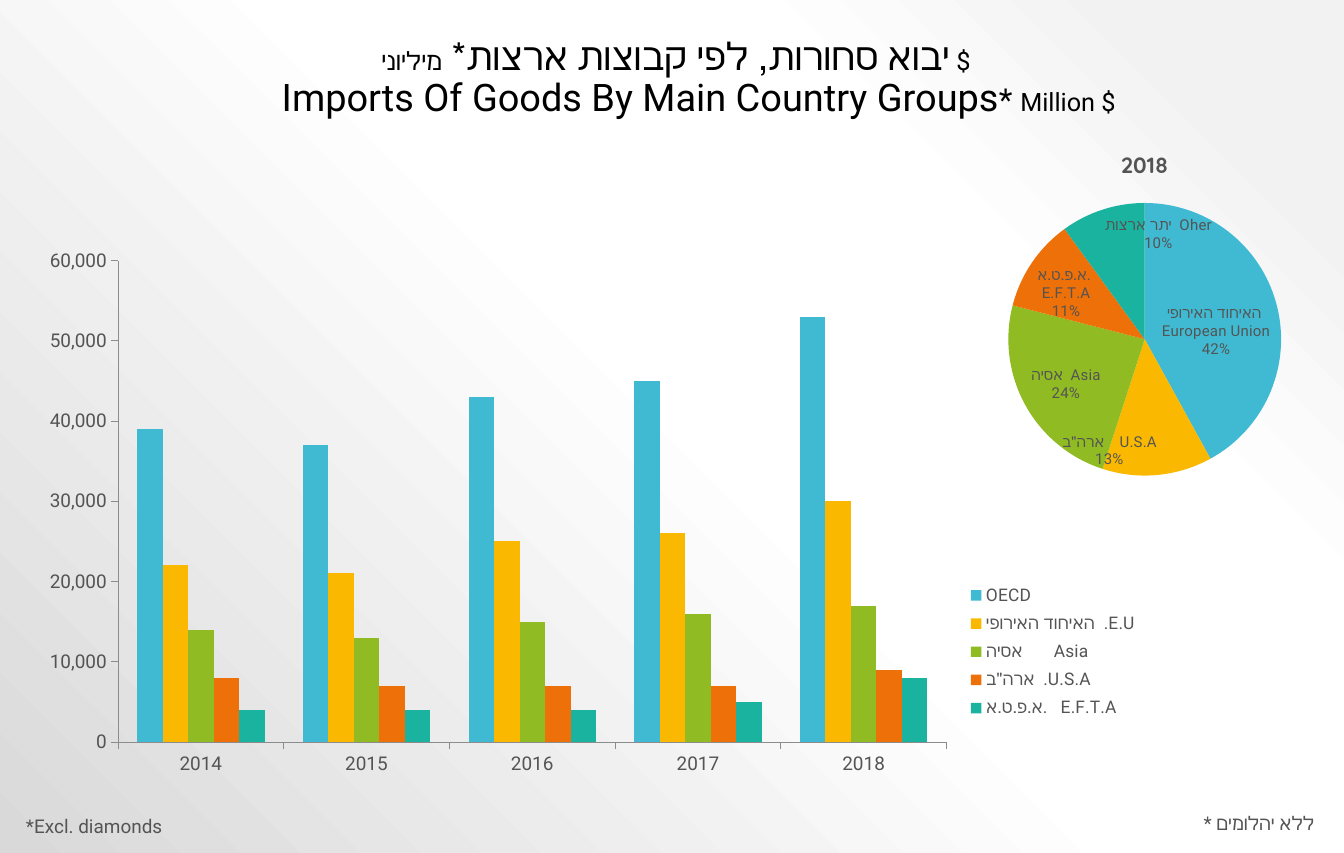
"""Build a slide of goods imports by country group, with a column and a pie chart."""
from pptx import Presentation, util as u
from pptx.chart.data import CategoryChartData
from pptx.dml.color import RGBColor
from pptx.enum import chart as kinds, text
from pptx.oxml import parse_xml
from pptx.oxml.ns import nsdecls, qn

COLORS = {
    "title": "000000", "body": "545454", "axis": "8C8C8C",
    "blue": "40BAD2", "yellow": "FAB900", "green": "90BB23",
    "orange": "EE7008", "teal": "1AB39F",
}
GROUP_COLORS = ["blue", "yellow", "green", "orange", "teal"]
BACKDROP = [(10, "F2F2F2"), (28, "FFFFFF"), (48, "FFFFFF"), (100, "D9D9D9")]
YEARS = ["2014", "2015", "2016", "2017", "2018"]
IMPORTS = {
    "OECD": [39000, 37000, 43000, 45000, 53000],
    "האיחוד האירופי  .E.U": [22000, 21000, 25000, 26000, 30000],
    "אסיה       Asia": [14000, 13000, 15000, 16000, 17000],
    'ארה"ב  .U.S.A': [8000, 7000, 7000, 7000, 9000],
    "א.פ.ט.א.   E.F.T.A": [4000, 4000, 4000, 5000, 8000],
}
SHARES = {
    "האיחוד האירופי \nEuropean Union": 42,
    'ארה"ב    U.S.A': 13,
    "אסיה  Asia": 24,
    "א.פ.ט.א.  E.F.T.A": 11,
    "יתר ארצות  Oher": 10,
}
LEFT, CENTER, RIGHT = text.PP_ALIGN.LEFT, text.PP_ALIGN.CENTER, text.PP_ALIGN.RIGHT


def set_font(font, size, color="body", name="Roboto", bold=False):
    """Give a font its size, colour, typeface and weight."""
    font.size = u.Pt(size)
    font.color.rgb = RGBColor.from_string(COLORS[color])
    font.name = name
    font.bold = bold


def add_span(para, words, **style):
    """Add a formatted run to a paragraph."""
    span = para.add_run()
    span.text = words
    set_font(span.font, **style)


def paint(fill, color):
    """Fill with one named colour."""
    fill.solid()
    fill.fore_color.rgb = RGBColor.from_string(COLORS[color])


def place(part, left, top, width, height, after=None):
    """Fix a chart part at fractions of the chart's size."""
    for old in part.findall(qn("c:layout")):
        part.remove(old)
    target = "" if after is not None else '<c:layoutTarget val="inner"/>'
    modes = '<c:xMode val="edge"/><c:yMode val="edge"/>'
    sizes = "".join(f'<c:{tag} val="{value}"/>' for tag, value in
                    zip("xywh", (left, top, width, height)))
    layout = parse_xml(f'<c:layout {nsdecls("c")}><c:manualLayout>{target}{modes}{sizes}'
                       '</c:manualLayout></c:layout>')
    if after is None:
        part.insert(0, layout)
    else:
        after.addnext(layout)


class ImportsSlide:
    """Hold the page and add its elements in one style."""

    def __init__(self, deck):
        """Add a blank page to the deck."""
        self.page = deck.slides.add_slide(deck.slide_layouts[6])

    def backdrop(self, stops):
        """Shade the background outwards from the top right corner."""
        self.page.background.fill.solid()
        holder = self.page.element.find(".//" + qn("p:bgPr"))
        marks = "".join(f'<a:gs pos="{pos * 1000}"><a:srgbClr val="{color}"/></a:gs>'
                        for pos, color in stops)
        shade = parse_xml(
            f'<a:gradFill {nsdecls("a")} rotWithShape="1"><a:gsLst>{marks}</a:gsLst>'
            '<a:path path="circle"><a:fillToRect l="100000" b="100000"/></a:path></a:gradFill>')
        holder.replace(holder.find(qn("a:solidFill")), shade)

    def text(self, at, lines, align=LEFT, anchor=text.MSO_ANCHOR.TOP,
             color="body", spacing=1.0, indents=(0,)):
        """Add a text box of lines, each a list of words and sizes."""
        frame = self.page.shapes.add_textbox(*map(u.Inches, at)).text_frame
        frame.word_wrap = True
        frame.vertical_anchor = anchor
        for index, (line, indent) in enumerate(zip(lines, indents)):
            para = frame.add_paragraph() if index else frame.paragraphs[0]
            para.alignment = align
            para.line_spacing = spacing
            if indent:
                para._p.get_or_add_pPr().set("marL", str(u.Inches(indent)))
            for words, size in line:
                add_span(para, words, size=size, color=color)

    def chart(self, kind, at, categories, series):
        """Add a chart in the slide's chart font."""
        data = CategoryChartData(number_format="#,##0")
        data.categories = categories
        for name, values in series.items():
            data.add_series(name, values)
        chart = self.page.shapes.add_chart(kind, *map(u.Inches, at), data).chart
        set_font(chart.font, 18, name="Quicksand")
        chart.has_title = False
        chart.has_legend = False
        return chart

    def columns(self, at, categories, series):
        """Add the clustered columns with axes and legend."""
        chart = self.chart(kinds.XL_CHART_TYPE.COLUMN_CLUSTERED, at, categories, series)
        plot = chart.plots[0]
        plot.gap_width, plot.overlap, plot.vary_by_categories = 150, 0, False
        for bars, color in zip(plot.series, GROUP_COLORS):
            paint(bars.format.fill, color)
        for axis in (chart.category_axis, chart.value_axis):
            axis.has_major_gridlines = False
            axis.major_tick_mark = kinds.XL_TICK_MARK.OUTSIDE
            axis.minor_tick_mark = kinds.XL_TICK_MARK.NONE
            paint(axis.format.line.fill, "axis")
            axis.format.line.width = u.Pt(0.5)
            set_font(axis.tick_labels.font, 12)
        scale = chart.value_axis
        scale.minimum_scale, scale.maximum_scale, scale.major_unit = 0, 60000, 10000
        scale.tick_labels.number_format = "#,##0"
        scale.tick_labels.number_format_is_linked = False
        place(chart._chartSpace.find(".//" + qn("c:plotArea")), 0.08, 0.04, 0.74, 0.88)
        chart.has_legend = True
        legend = chart.legend
        legend.position = kinds.XL_LEGEND_POSITION.RIGHT
        legend.include_in_layout = False
        set_font(legend.font, 11)
        box = legend._element
        place(box, 0.83, 0.62, 0.17, 0.27, after=box.find(qn("c:legendPos")))

    def pie(self, at, title, shares):
        """Add the pie with a title and labels inside its slices."""
        chart = self.chart(kinds.XL_CHART_TYPE.PIE, at, list(shares),
                           {"Series 1": list(shares.values())})
        chart.has_title = True
        add_span(chart.chart_title.text_frame.paragraphs[0], title,
                 size=14, name="Quicksand", bold=True)
        plot = chart.plots[0]
        plot.vary_by_categories = True
        for index, color in enumerate(GROUP_COLORS):
            paint(plot.series[0].points[index].format.fill, color)
        plot.has_data_labels = True
        labels = plot.data_labels
        labels.show_value = False
        labels.show_category_name = True
        labels.show_percentage = True
        labels.number_format = "0%"
        labels.number_format_is_linked = False
        labels.position = kinds.XL_LABEL_POSITION.INSIDE_END
        set_font(labels.font, 9.5)
        separator = parse_xml(f'<c:separator {nsdecls("c")}>\n</c:separator>')
        labels._element.find(qn("c:showBubbleSize")).addnext(separator)
        place(chart._chartSpace.find(".//" + qn("c:plotArea")), 0.13, 0.18, 0.74, 0.7)


def main():
    """Build and save the deck."""
    deck = Presentation()
    deck.slide_width, deck.slide_height = u.Inches(30 / 2.54), u.Inches(7.5)
    slide = ImportsSlide(deck)
    slide.backdrop(BACKDROP)
    slide.text((0.39, 0.2, 11.1, 0.9), [
        [("יבוא סחורות, לפי קבוצות ארצות* ", 24), ("מיליוני $", 16)],
        [("Imports Of Goods By Main Country Groups", 24), ("* ", 20), ("Million $", 16)],
    ], CENTER, text.MSO_ANCHOR.BOTTOM, "title", 0.9, indents=(0, 0.4))
    slide.columns((0.25, 2.1, 9.84, 4.81), YEARS, IMPORTS)
    slide.text((0.13, 7.11, 1.72, 0.3), [[("*Excl. diamonds", 12)]])
    slide.text((9.88, 7.09, 1.77, 0.3), [[("* ללא יהלומים", 12)]], RIGHT)
    slide.pie((8.44, 1.15, 3.24, 3.46), "2018", SHARES)
    deck.save("out.pptx")


if __name__ == "__main__":
    main()
